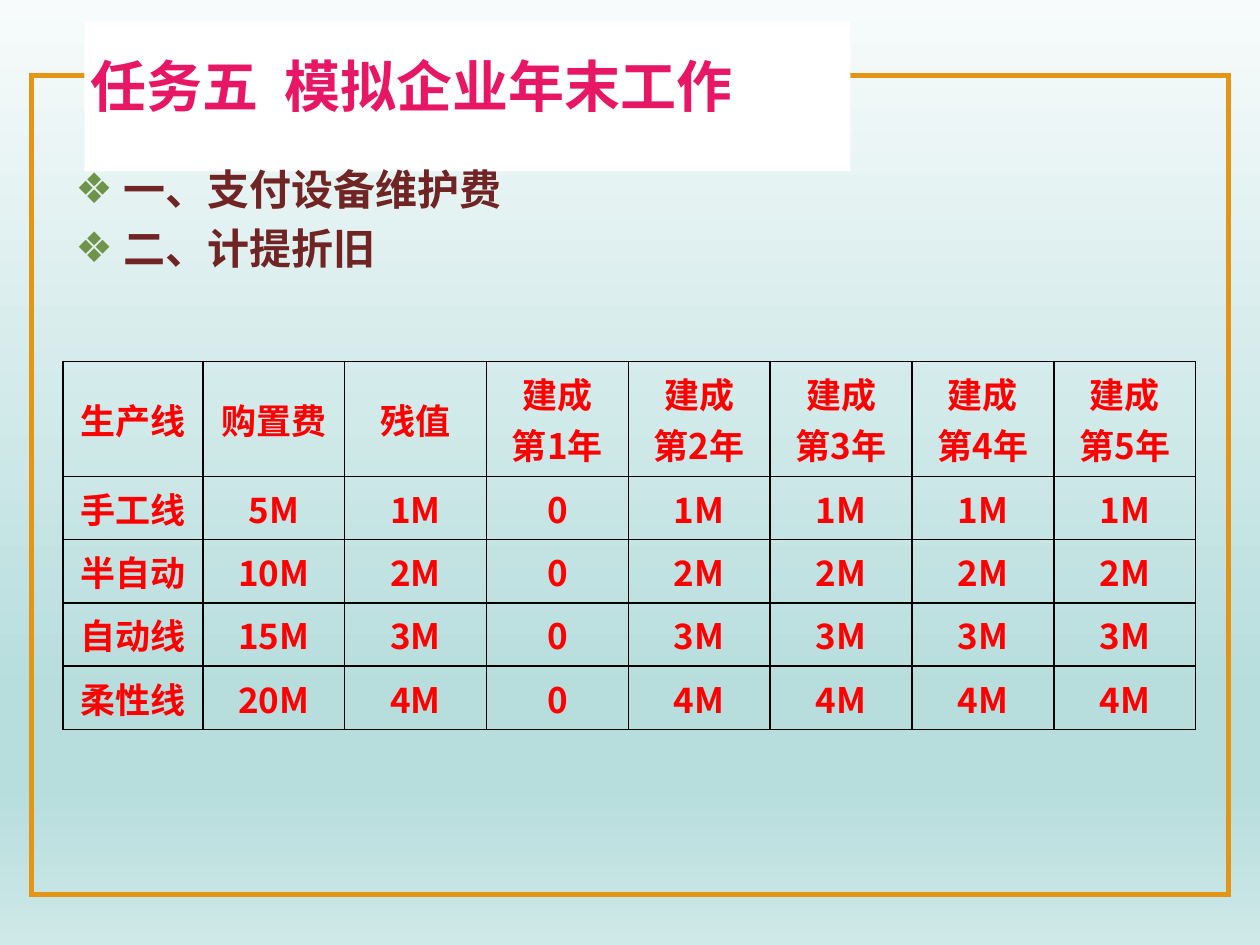
from lxml.etree import SubElement
from pptx import Presentation
from pptx.dml.color import RGBColor
from pptx.enum.shapes import MSO_SHAPE
from pptx.enum.text import MSO_ANCHOR, MSO_AUTO_SIZE, PP_ALIGN
from pptx.oxml.ns import qn
from pptx.util import Inches, Pt

HANG = Inches(0.38)
GRADE = [(0, "F7FBFB"), (74, "B7DDDD"), (83, "B7DDDD"), (100, "CFE8E8")]
HEADS = ["生产线", "购置费", "残值"] + [f"建成\n第{year}年" for year in range(1, 6)]
LINES = [("手工线", 5, 1), ("半自动", 10, 2), ("自动线", 15, 3), ("柔性线", 20, 4)]


def color(text):
    """Turn a hex string into a colour."""
    return RGBColor.from_string(text)


def add(parent, tag, **values):
    """Append a drawing element with its attributes."""
    return SubElement(parent, qn("a:" + tag), values)


def style(para, face, size, tint):
    """Format the runs of a paragraph in bold."""
    for run in para.runs:
        font = run.font
        font.name, font.size, font.bold = face, Pt(size), True
        font.color.rgb = color(tint)
        add(run._r.get_or_add_rPr(), "ea", typeface=face)


def hang(para):
    """Set a hanging indent and return the paragraph properties."""
    props = para._p.get_or_add_pPr()
    props.set("marL", str(HANG))
    props.set("indent", str(-HANG))
    return props


def backdrop(slide):
    """Fill the background with a vertical gradient."""
    fill = slide.background.fill
    fill.gradient()
    fill.gradient_angle = 270
    stops = slide.element.find(".//" + qn("a:gsLst"))
    for stop in list(stops):
        stops.remove(stop)
    for place, tint in GRADE:
        add(add(stops, "gs", pos=str(place * 1000)), "srgbClr", val=tint)


def panel(slide, box, fill=None, line=None):
    """Draw a plain rectangle."""
    shape = slide.shapes.add_shape(MSO_SHAPE.RECTANGLE, *map(Inches, box))
    shape.shadow.inherit = False
    if fill:
        shape.fill.solid()
        shape.fill.fore_color.rgb = color(fill)
    else:
        shape.fill.background()
    if line:
        shape.line.color.rgb = color(line)
        shape.line.width = Pt(3)
        add(shape.line._get_or_add_ln(), "miter", lim="800000")
    else:
        shape.line.fill.background()


def heading(slide, box, text):
    """Place the title in front of its panel."""
    title = slide.shapes.title
    title.left, title.top, title.width, title.height = map(Inches, box)
    frame = title.text_frame
    frame.text = text
    frame.margin_left = frame.margin_right = 0
    frame.word_wrap = False
    frame.auto_size = MSO_AUTO_SIZE.NONE
    frame.vertical_anchor = MSO_ANCHOR.MIDDLE
    para = frame.paragraphs[0]
    para.alignment = PP_ALIGN.CENTER
    style(para, "Noto Sans CJK JP", 32, "E81766")
    title.element.getparent().append(title.element)


def points(slide, box, items):
    """List the bulleted points."""
    frame = slide.shapes.add_textbox(*map(Inches, box)).text_frame
    frame.word_wrap = True
    frame.text = "\n".join(items)
    for index, para in enumerate(frame.paragraphs):
        props = hang(para)
        add(add(props, "buClr"), "srgbClr", val="6E9349")
        add(props, "buFont", typeface="DejaVu Sans")
        add(props, "buChar", char="❖")
        if index:
            para.space_before = Pt(4.8)
        style(para, "DejaVu Sans", 24, "702424")


def border(cell):
    """Draw thin black lines around a cell."""
    props = cell._tc.get_or_add_tcPr()
    for side in "LRTB":
        line = add(props, "ln" + side, w=str(Pt(1)))
        add(add(line, "solidFill"), "srgbClr", val="000000")


def costs(slide, box):
    """Build the depreciation table."""
    rows = [HEADS] + [[name, f"{price}M", f"{rest}M", "0"] + [f"{rest}M"] * 4
                      for name, price, rest in LINES]
    table = slide.shapes.add_table(len(rows), len(HEADS), *map(Inches, box)).table
    table.first_row = table.horz_banding = False
    first = 1.11
    for index, col in enumerate(table.columns):
        col.width = Inches((box[2] - first) / (len(HEADS) - 1) if index else first)
    head = 0.91
    for index, row in enumerate(rows):
        table.rows[index].height = Inches(
            (box[3] - head) / len(LINES) if index else head)
        for place, text in enumerate(row):
            cell = table.cell(index, place)
            border(cell)
            cell.fill.background()
            cell.vertical_anchor = MSO_ANCHOR.MIDDLE
            cell.text_frame.text = text
            for para in cell.text_frame.paragraphs:
                hang(para)
                para.alignment = PP_ALIGN.CENTER
                style(para, "Noto Sans CJK SC", 20, "FF0000")


def main():
    """Build and save the slide."""
    deck = Presentation()
    deck.slide_width, deck.slide_height = Inches(10), Inches(7.5)
    slide = deck.slides.add_slide(deck.slide_layouts[5])
    backdrop(slide)
    panel(slide, (0.25, 0.6, 9.5, 6.5), line="E49514")
    panel(slide, (0.67, 0.17, 6.08, 1.19), fill="FFFFFF")
    points(slide, (0.5, 1.25, 9, 2.59), ["一、支付设备维护费", "二、计提折旧"])
    costs(slide, (0.5, 2.87, 8.99, 2.92))
    heading(slide, (0.67, 0.36, 5.2, 0.63), "任务五  模拟企业年末工作")
    deck.save("out.pptx")


if __name__ == "__main__":
    main()
